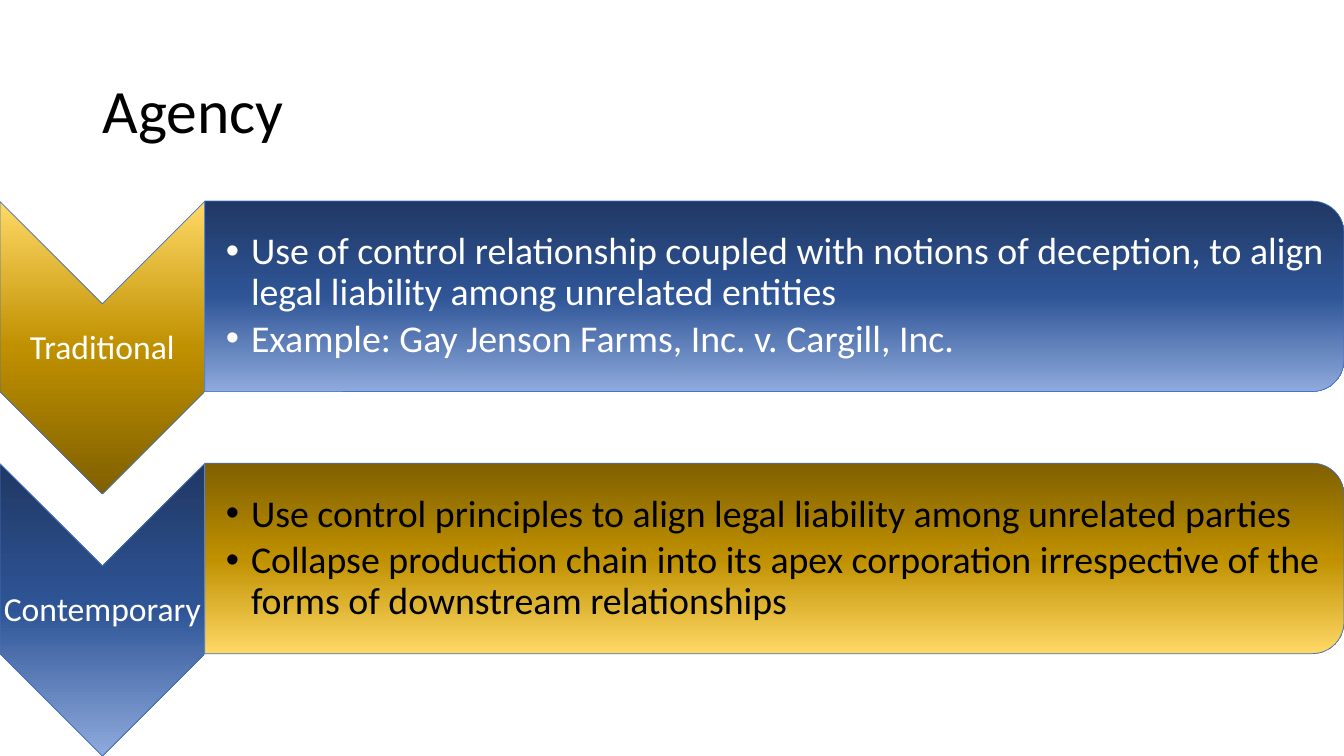
from lxml import etree
from pptx import Presentation
from pptx import util as u
from pptx.dml import color
from pptx.enum import shapes, text
from pptx.oxml import ns

hues = {"black": "000000", "white": "FFFFFF", "line": "4472C4"}
gold = ["FFD966", "BF9000", "806000"]
blue = ["203864", "2F5597", "8FAADC"]

deck = Presentation()
deck.slide_width, deck.slide_height = u.Inches(13.33), u.Inches(7.5)
slide = deck.slides.add_slide(deck.slide_layouts[3])


def write(box, place, lines, size=24, hue="white", align="LEFT", left=0.02,
          edge=0.02, after=0, bullet=False):
    """Place a box and fill it with formatted paragraphs."""
    box.left, box.top, box.width, box.height = map(u.Inches, place)
    frame = box.text_frame
    frame.word_wrap = True
    frame.auto_size = text.MSO_AUTO_SIZE.NONE
    frame.vertical_anchor = text.MSO_ANCHOR.MIDDLE
    frame.margin_left = u.Inches(left)
    frame.margin_right = frame.margin_top = frame.margin_bottom = u.Inches(edge)
    frame.text = "\n".join(lines)
    for para in frame.paragraphs:
        para.alignment = text.PP_ALIGN[align]
        para.line_spacing = 0.9
        para.space_before, para.space_after = u.Pt(0), u.Pt(after)
        if bullet:
            props = para._p.get_or_add_pPr()
            props.set("marL", str(u.Inches(0.25)))
            props.set("indent", str(u.Inches(-0.25)))
            etree.SubElement(props, ns.qn("a:buChar")).set("char", "•")
        para.font.name, para.font.size = "Calibri", u.Pt(size)
        para.font.color.rgb = color.RGBColor.from_string(hues[hue])


def draw(kind, mid, width, height, stops):
    """Add a shape turned by 90 degrees with a vertical gradient."""
    x, y = mid
    form = slide.shapes.add_shape(kind, u.Inches(x - width / 2), u.Inches(y - height / 2),
                                  u.Inches(width), u.Inches(height))
    form.rotation = 90
    form.shadow.inherit = False
    form.line.color.rgb = color.RGBColor.from_string(hues["line"])
    form.line.width = u.Pt(0.5)
    form.fill.gradient()
    grad = form._element.spPr.find(ns.qn("a:gradFill"))
    grad.set("rotWithShape", "0")
    for part in list(grad):
        grad.remove(part)
    marks = etree.SubElement(grad, ns.qn("a:gsLst"))
    for i, stop in enumerate(stops):
        mark = etree.SubElement(marks, ns.qn("a:gs"), pos=str(i * 50000))
        etree.SubElement(mark, ns.qn("a:srgbClr"), val=stop)
    etree.SubElement(grad, ns.qn("a:lin"), ang="5400000", scaled="0")
    return form


# Title
title, *lists = slide.placeholders
write(title, (0.92, 0.4, 11.5, 1.45), ["Agency"], size=44, hue="black", left=0.1, edge=0.05)

# Rows: label, chevron stops, panel stops, text colour, points
rows = [
    ("Traditional", gold, blue, "white", [
        "Use of control relationship coupled with notions of deception, "
        "to align legal liability among unrelated entities",
        "Example: Gay Jenson Farms, Inc. v. Cargill, Inc."]),
    ("Contemporary", blue, gold[::-1], "black", [
        "Use control principles to align legal liability among unrelated parties",
        "Collapse production chain into its apex corporation irrespective "
        "of the forms of downstream relationships"]),
]
for i, (label, tip, fill, hue, points) in enumerate(rows):
    top = 2 + 2.6 * i

    # Chevron and its label
    draw(shapes.MSO_SHAPE.CHEVRON, (1.015, top + 1.45), 2.9, 2.03, tip)
    write(slide.shapes.add_textbox(0, 0, 0, 0), (0, top + 1.02, 2.03, 0.87),
          [label], align="CENTER")

    # Panel with its list in front
    draw(shapes.MSO_SHAPE.ROUND_2_SAME_RECTANGLE, (7.68, top + 0.94), 1.89, 11.3, fill)
    slide.shapes._spTree.append(lists[i]._element)
    write(lists[i], (2.03, top + 0.09, 11.21, 1.7), points, size=27, hue=hue,
          left=0.21, after=4, bullet=True)

deck.save("out.pptx")
